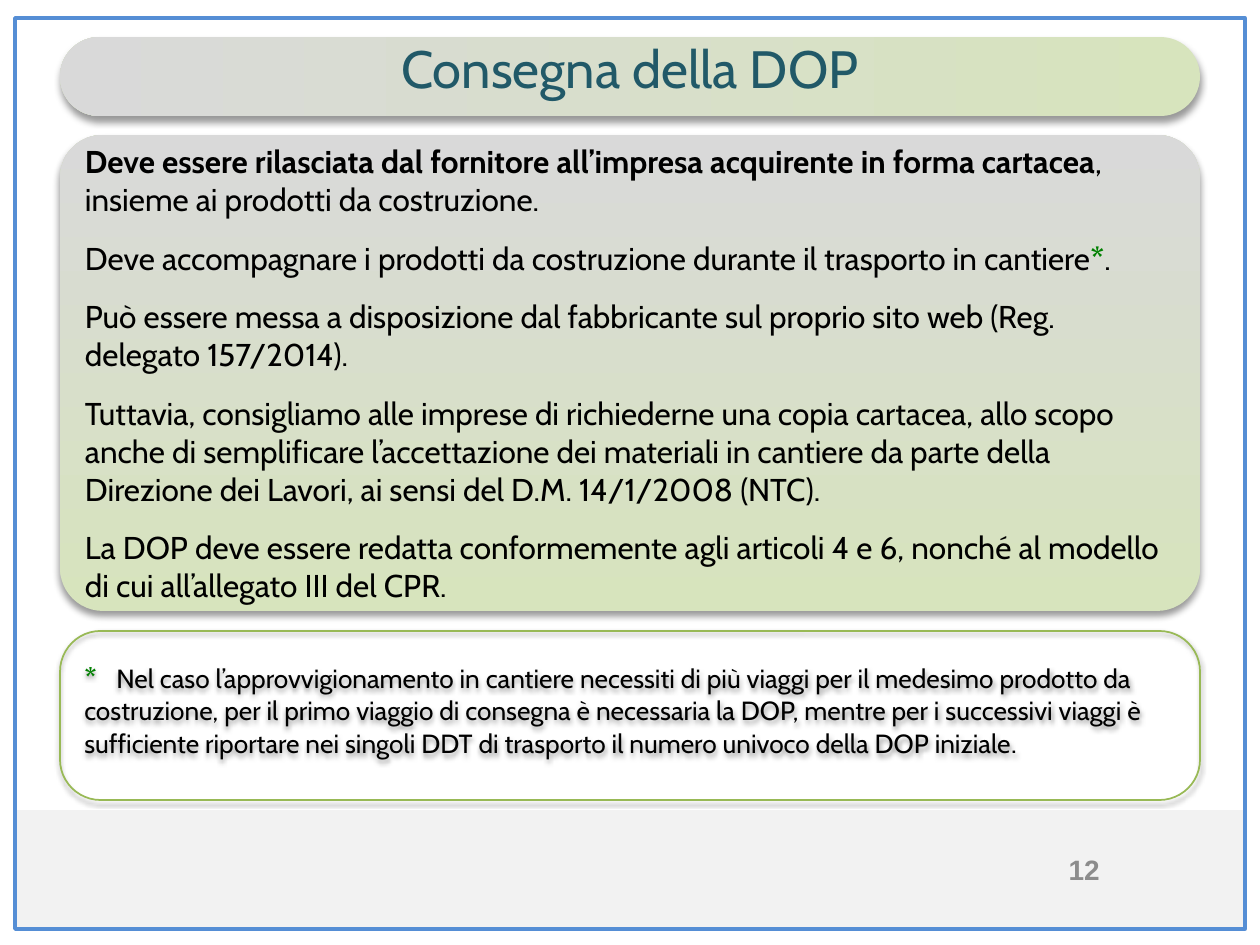
import pptx
import pptx.util
import pptx.dml.color
import pptx.enum.shapes
import pptx.enum.text
import pptx.oxml
import pptx.oxml.ns

PX = 914400 / 126
SHAPES = pptx.enum.shapes.MSO_SHAPE
ALIGN = pptx.enum.text.PP_ALIGN
Pt = pptx.util.Pt


def color(value):
    return pptx.dml.color.RGBColor.from_string(value)


def write(paragraph, runs):
    for text, ink, style in runs:
        run = paragraph.add_run()
        run.text = text
        run.font.color.rgb = color(ink)
        for key, value in style.items():
            setattr(run.font, key, value)


deck = pptx.Presentation()
deck.slide_width = round(1260 * PX)
deck.slide_height = round(945 * PX)
slide = deck.slides.add_slide(deck.slide_layouts[6])

panels = {
    "footer": dict(box=(15, 810, 1230, 118), fill="F2F2F2"),
    "border": dict(box=(15, 18, 1230, 911), line=("558ED5", 2)),
    "title": dict(box=(60, 37, 1140, 79), corner=0.5, angle=180, shadow=(40, 4, 3)),
    "rules": dict(box=(60, 135, 1140, 476), corner=0.09, angle=90, shadow=(40, 4, 3)),
    "footnote": dict(box=(60, 631, 1140, 169), corner=0.24, line=("98B955", 1), shadow=(38, 3.1, 1.6)),
}
frames = {}
for part, look in panels.items():
    kind = SHAPES.ROUNDED_RECTANGLE if "corner" in look else SHAPES.RECTANGLE
    panel = slide.shapes.add_shape(kind, *(round(n * PX) for n in look["box"]))
    panel.shadow.inherit = False
    if "corner" in look:
        panel.adjustments[0] = look["corner"]
    if "fill" in look:
        panel.fill.solid()
        panel.fill.fore_color.rgb = color(look["fill"])
    elif "angle" in look:
        panel.fill.gradient()
        panel.fill.gradient_angle = look["angle"]
        for stop, shade, position in zip(panel.fill.gradient_stops, ("D7E4BD", "D9D9D9"), (0, 1)):
            stop.color.rgb = color(shade)
            stop.position = position
    else:
        panel.fill.background()
    if "line" in look:
        panel.line.color.rgb = color(look["line"][0])
        panel.line.width = Pt(look["line"][1])
    else:
        panel.line.fill.background()
    if "shadow" in look:
        alpha, blur, distance = look["shadow"]
        effects = panel._element.spPr.find(pptx.oxml.ns.qn("a:effectLst"))
        effects.append(pptx.oxml.parse_xml(
            f'<a:outerShdw {pptx.oxml.ns.nsdecls("a")} blurRad="{Pt(blur)}" dist="{Pt(distance)}" '
            f'dir="5400000" rotWithShape="0"><a:srgbClr val="000000">'
            f'<a:alpha val="{alpha * 1000}"/></a:srgbClr></a:outerShdw>'))
    frames[part] = panel.text_frame
    frames[part].word_wrap = True
    frames[part].vertical_anchor = pptx.enum.text.MSO_ANCHOR.MIDDLE

heading = frames["title"].paragraphs[0]
heading.alignment = ALIGN.CENTER
heading.line_spacing = Pt(26)
write(heading, [("Consegna della DOP", "215968", dict(name="Cabin", size=Pt(30)))])

plain = dict(name="Cabin", size=Pt(18), bold=False)
strong = {**plain, "bold": True}
rules = [
    [("Deve essere rilasciata dal fornitore all’impresa acquirente in forma cartacea", "000000", strong),
     (", insieme ai prodotti da costruzione.", "000000", plain)],
    [("Deve accompagnare i prodotti da costruzione durante il trasporto in cantiere", "000000", plain),
     ("*", "008000", strong),
     (".", "000000", plain)],
    [("Può essere messa a disposizione dal fabbricante sul proprio sito web (Reg. delegato 157/2014).",
      "000000", plain)],
    [("Tuttavia, consigliamo alle imprese di richiederne una copia cartacea, allo scopo anche di "
      "semplificare l’accettazione dei materiali in cantiere da parte della Direzione dei Lavori, "
      "ai sensi del D.M. 14/1/2008 (NTC).", "000000", plain)],
    [("La DOP deve essere redatta conformemente agli articoli 4 e 6, nonché al modello di cui "
      "all’allegato III del CPR.", "000000", plain)],
]
for index, runs in enumerate(rules):
    rule = frames["rules"].add_paragraph() if index else frames["rules"].paragraphs[0]
    rule.alignment = ALIGN.LEFT
    rule.space_before = Pt(12 if index else 0)
    write(rule, runs)

frames["footnote"].margin_bottom = round(18 * PX)
footnote = frames["footnote"].paragraphs[0]
footnote.alignment = ALIGN.LEFT
footnote._p.get_or_add_pPr().append(pptx.oxml.parse_xml(
    f'<a:tabLst {pptx.oxml.ns.nsdecls("a")}><a:tab pos="{round(32 * PX)}" algn="l"/></a:tabLst>'))
write(footnote, [
    ("*\t", "008000", {**strong, "size": Pt(16)}),
    ("Nel caso l’approvvigionamento in cantiere necessiti di più viaggi per il medesimo prodotto da "
     "costruzione, per il primo viaggio di consegna è necessaria la DOP, mentre per i successivi viaggi "
     "è sufficiente riportare nei singoli DDT di trasporto il numero univoco della DOP iniziale",
     "000000", {**plain, "size": Pt(15)}),
    (".", "000000", {**plain, "size": Pt(16)}),
])

page = slide.shapes.add_textbox(*(round(n * PX) for n in (937, 844, 294, 50))).text_frame
page.word_wrap = True
page.vertical_anchor = pptx.enum.text.MSO_ANCHOR.MIDDLE
page.paragraphs[0].alignment = ALIGN.CENTER
write(page.paragraphs[0], [("12", "8C8C8C", dict(name="Arial", size=Pt(16), bold=True))])

deck.save("out.pptx")
